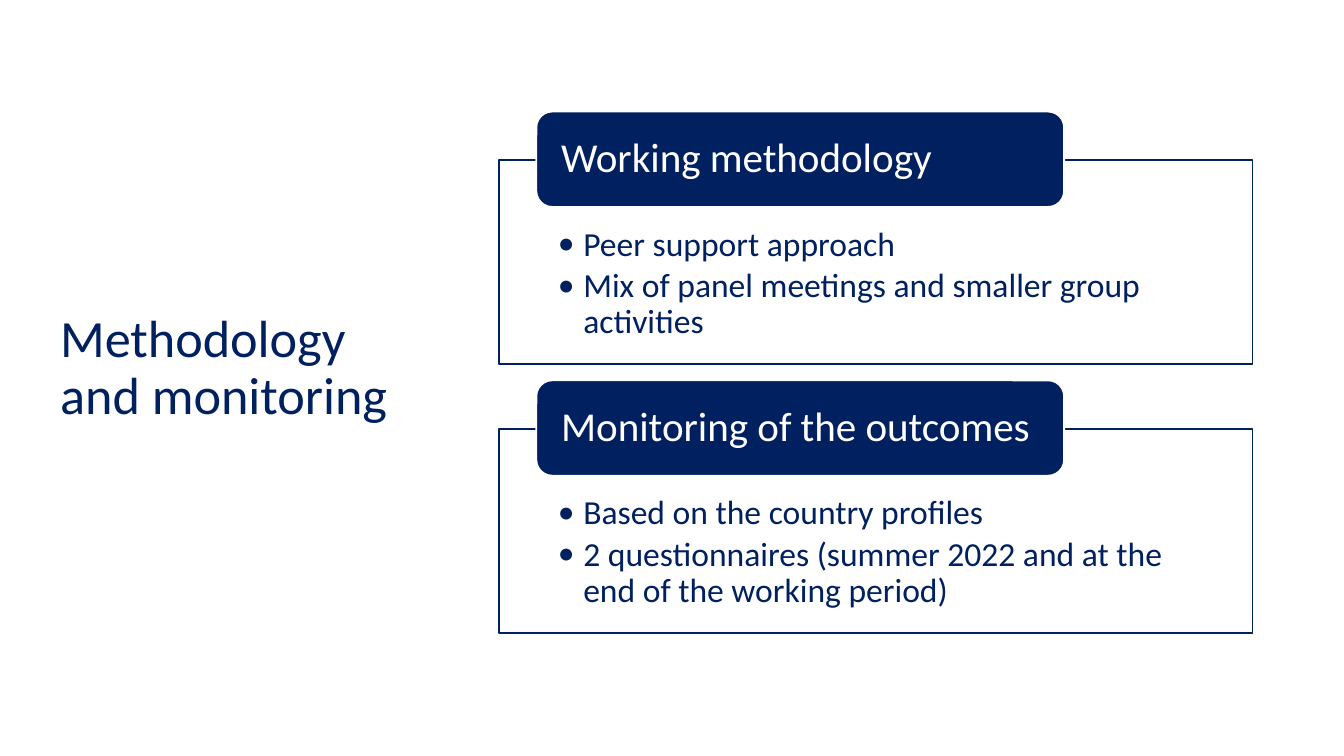
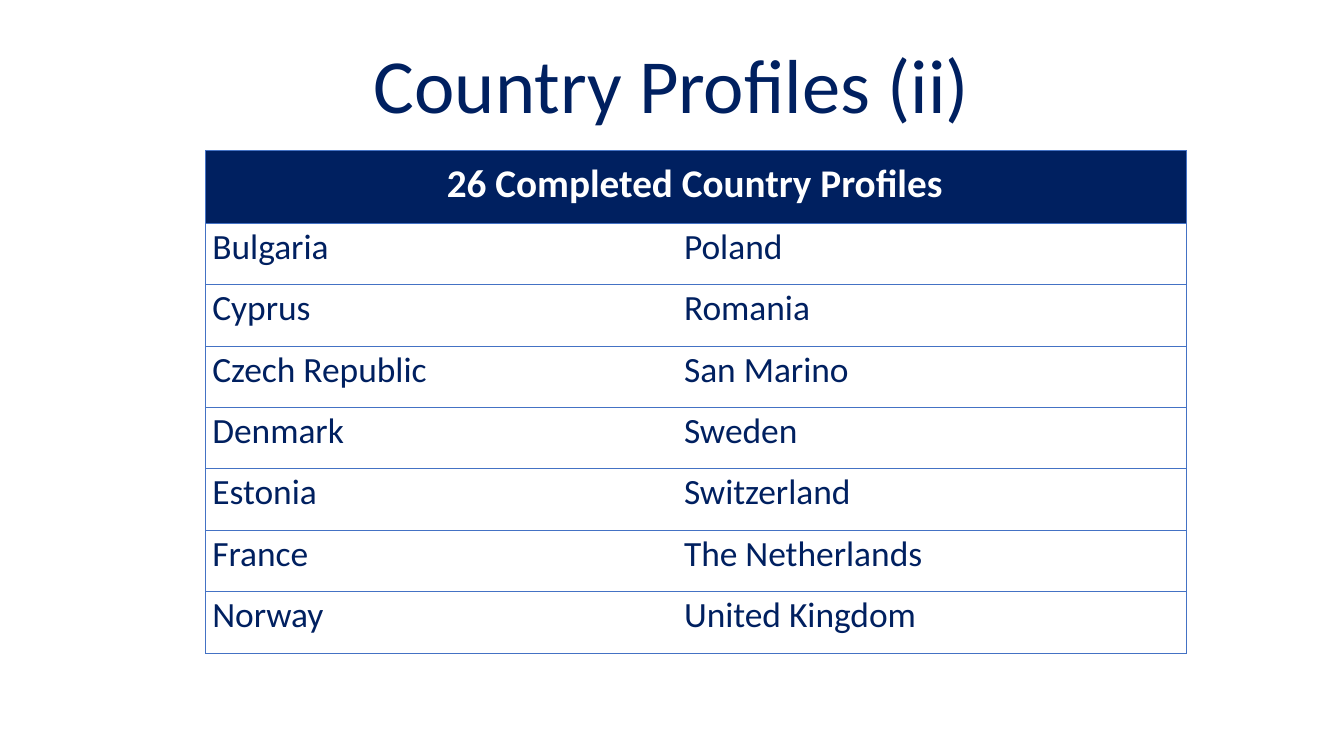
from dataclasses import dataclass

from lxml import etree
from pptx import Presentation
from pptx import util as u
from pptx.dml.color import RGBColor
from pptx.enum import shapes, text
from pptx.oxml import ns


@dataclass(frozen=True)
class Theme:
    font: str = "Calibri"
    navy: str = "002060"
    white: str = "FFFFFF"
    rule: str = "4472C4"
    rule_width: float = 0.5
    outline_width: float = 1
    side_title: float = 28
    top_title: float = 41
    heading: float = 22
    bullet: float = 18
    table_head: float = 21
    table_body: float = 19


THEME = Theme()

SLIDE_WIDTH = 10
SLIDE_HEIGHT = SLIDE_WIDTH * 9 / 16

TOPICS = [
    ("Working methodology",
     ["Peer support approach",
      "Mix of panel meetings and smaller group activities"]),
    ("Monitoring of the outcomes",
     ["Based on the country profiles",
      "2 questionnaires (summer 2022 and at the end of the working period)"]),
]

COUNTRIES = [
    ("Bulgaria", "Poland"),
    ("Cyprus", "Romania"),
    ("Czech Republic", "San Marino"),
    ("Denmark", "Sweden"),
    ("Estonia", "Switzerland"),
    ("France", "The Netherlands"),
    ("Norway", "United Kingdom"),
]


def rgb(value):
    return RGBColor.from_string(value)


def inches(values):
    return [u.Inches(value) for value in values]


def set_margins(target, left, top, right, bottom):
    """Inset the text of a frame or a table cell."""
    target.margin_left, target.margin_top, target.margin_right, target.margin_bottom = inches(
        (left, top, right, bottom))


def style_text(frame, size, color, align=text.PP_ALIGN.LEFT, bold=False, spacing=None, after=None):
    for paragraph in frame.paragraphs:
        paragraph.alignment = align
        paragraph.line_spacing = spacing
        if after is not None:
            paragraph.space_after = u.Pt(after)
        for run in paragraph.runs:
            run.font.name = THEME.font
            run.font.size = u.Pt(size)
            run.font.bold = bold
            run.font.color.rgb = rgb(color)


def add_bullet(paragraph, indent):
    properties = paragraph._p.get_or_add_pPr()
    properties.set("marL", str(u.Inches(indent)))
    properties.set("indent", str(-u.Inches(indent)))
    etree.SubElement(properties, ns.qn("a:buFont"), typeface=THEME.font)
    etree.SubElement(properties, ns.qn("a:buChar"), char="•")


def add_title(slide, box, wording, size, anchor, align):
    frame = slide.shapes.add_textbox(*inches(box)).text_frame
    frame.word_wrap = True
    frame.vertical_anchor = anchor
    frame.text = wording
    style_text(frame, size, THEME.navy, align, spacing=0.9, after=6)


def add_block(slide, preset, box, fill, outline):
    block = slide.shapes.add_shape(preset, *inches(box))
    block.shadow.inherit = False
    block.fill.solid()
    block.fill.fore_color.rgb = rgb(fill)
    block.line.color.rgb = rgb(outline)
    block.line.width = u.Pt(THEME.outline_width)
    block.text_frame.word_wrap = True
    return block


def add_topic(slide, box, heading, points):
    """Outlined panel of bullets with a heading tab across its top edge."""
    left, top, width, height = box
    tab_height = 0.71
    panel_offset = 0.36
    panel = add_block(slide, shapes.MSO_SHAPE.RECTANGLE,
                      (left, top + panel_offset, width, height - panel_offset),
                      THEME.white, THEME.navy).text_frame
    set_margins(panel, 0.44, 0.5, 0.44, 0.14)
    panel.vertical_anchor = text.MSO_ANCHOR.TOP
    panel.text = "\n".join(points)
    style_text(panel, THEME.bullet, THEME.navy, spacing=0.9, after=2.7)
    for point in panel.paragraphs:
        add_bullet(point, 0.19)

    tab = add_block(slide, shapes.MSO_SHAPE.ROUNDED_RECTANGLE,
                    (left + width * 0.05, top, width * 0.7, tab_height),
                    THEME.navy, THEME.white).text_frame
    set_margins(tab, 0.15, 0, 0.15, 0)
    tab.vertical_anchor = text.MSO_ANCHOR.MIDDLE
    tab.text = heading
    style_text(tab, THEME.heading, THEME.white, spacing=0.9, after=7.7)


def add_topics(slide, box):
    left, top, width, height = box
    gap = 0.12
    topic_height = (height - gap * (len(TOPICS) - 1)) / len(TOPICS)
    for index, (heading, points) in enumerate(TOPICS):
        topic_top = top + index * (topic_height + gap)
        add_topic(slide, (left, topic_top, width, topic_height), heading, points)


def set_borders(cell, visible):
    """Rule the sides named in visible (letters of LRTB) and clear the others."""
    properties = cell._tc.get_or_add_tcPr()
    for index, side in enumerate("LRTB"):
        line = etree.Element(ns.qn(f"a:ln{side}"), w=str(u.Pt(THEME.rule_width)))
        if side in visible:
            fill = etree.SubElement(line, ns.qn("a:solidFill"))
            etree.SubElement(fill, ns.qn("a:srgbClr"), val=THEME.rule)
        else:
            etree.SubElement(line, ns.qn("a:noFill"))
        properties.insert(index, line)


def add_country_table(slide, box, heading):
    left, top, width, height = box
    head_height = 0.54
    body_height = (height - head_height) / len(COUNTRIES)
    first_width = 3.51
    table = slide.shapes.add_table(len(COUNTRIES) + 1, 2, *inches(box)).table
    table.columns[0].width = u.Inches(first_width)
    table.columns[1].width = u.Inches(width - first_width)
    for index, row in enumerate(table.rows):
        row.height = u.Inches(body_height if index else head_height)

    head = table.cell(0, 0)
    head.merge(table.cell(0, 1))
    head.text = heading
    head.vertical_anchor = text.MSO_ANCHOR.BOTTOM
    set_margins(head, 0.05, 0.01, 0.07, 0.11)
    style_text(head.text_frame, THEME.table_head, THEME.white, text.PP_ALIGN.CENTER, bold=True)
    for column in range(2):
        cell = table.cell(0, column)
        cell.fill.solid()
        cell.fill.fore_color.rgb = rgb(THEME.navy)
        set_borders(cell, "LRTB" if column == 0 else "RTB")

    for row, pair in enumerate(COUNTRIES, start=1):
        for column, country in enumerate(pair):
            cell = table.cell(row, column)
            cell.text = country
            cell.vertical_anchor = text.MSO_ANCHOR.MIDDLE
            cell.fill.background()
            set_margins(cell, 0.05, 0.01, 0.01, 0.11)
            style_text(cell.text_frame, THEME.table_body, THEME.navy)
            set_borders(cell, "LTB" if column == 0 else "RTB")


def build_methodology(slide):
    add_title(slide, (0.35, 0.46, 2.77, 4.57), "Methodology and monitoring",
              THEME.side_title, text.MSO_ANCHOR.MIDDLE, text.PP_ALIGN.LEFT)
    add_topics(slide, (3.71, 0.83, 5.61, 3.88))


def build_country_profiles(slide):
    add_title(slide, (0.69, 0.25, 8.62, 0.77), "Country Profiles (ii)",
              THEME.top_title, text.MSO_ANCHOR.BOTTOM, text.PP_ALIGN.CENTER)
    add_country_table(slide, (1.53, 1.12, 7.3, 3.74), "26 Completed Country Profiles")


def main():
    deck = Presentation()
    deck.slide_width, deck.slide_height = inches((SLIDE_WIDTH, SLIDE_HEIGHT))
    blank = deck.slide_layouts[6]
    for build in (build_methodology, build_country_profiles):
        build(deck.slides.add_slide(blank))
    deck.save("out.pptx")


if __name__ == "__main__":
    main()
